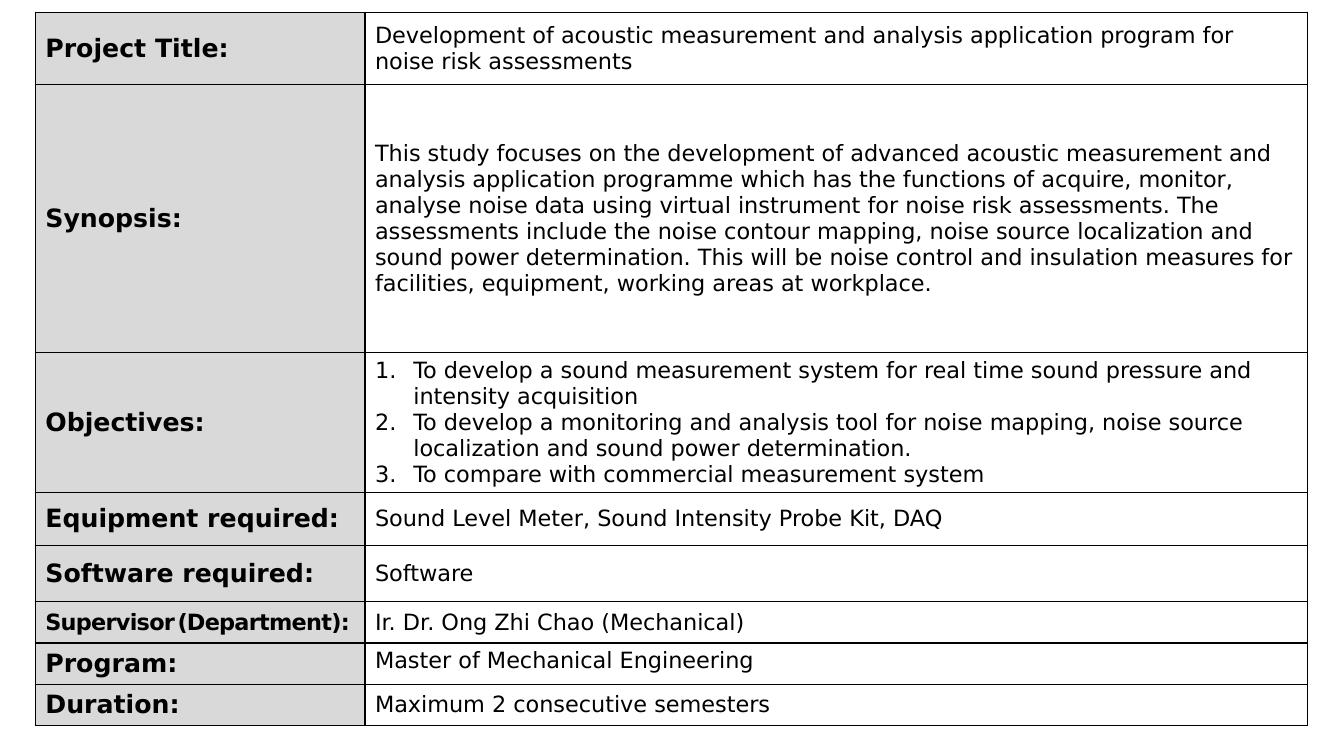
from dataclasses import dataclass

from lxml import etree
from pptx import Presentation
from pptx.dml.color import RGBColor
from pptx.enum.text import MSO_ANCHOR
from pptx.oxml.ns import qn
from pptx.util import Inches, Pt

MIDDLE, TOP = MSO_ANCHOR.MIDDLE, MSO_ANCHOR.TOP
BLANK_LAYOUT = 6


@dataclass(frozen=True)
class Theme:
    font: str = "DejaVu Sans"
    ink: str = "000000"
    label_fill: str = "D9D9D9"
    value_fill: str = "FFFFFF"
    label_size: float = 18
    value_size: float = 16
    gap_size: float = 5
    border: float = 1


THEME = Theme()
COLUMN_WIDTHS = (3.27, 9.35)

# Row height, label, paragraphs of the value
ROWS = [
    (0.72, "Project Title:", [
        "Development of acoustic measurement and analysis application program "
        "for noise risk assessments"]),
    (2.66, "Synopsis:", [
        "This study focuses on the development of advanced acoustic measurement "
        "and analysis application programme which has the functions of acquire, "
        "monitor, analyse noise data using virtual instrument for noise risk "
        "assessments. The assessments include the noise contour mapping, noise "
        "source localization and sound power determination. This will be noise "
        "control and insulation measures for facilities, equipment, working "
        "areas at workplace."]),
    (1.39, "Objectives:", [
        "To develop a sound measurement system for real time sound pressure and "
        "intensity acquisition",
        "To develop a monitoring and analysis tool for noise mapping, noise "
        "source localization and sound power determination.",
        "To compare with commercial measurement system"]),
    (0.52, "Equipment required:", ["Sound Level Meter, Sound Intensity Probe Kit, DAQ"]),
    (0.56, "Software required:", ["Software"]),
    (0.41, "Supervisor (Department):", ["Ir. Dr. Ong Zhi Chao (Mechanical)"]),
    (0.41, "Program:", ["Master of Mechanical Engineering"]),
    (0.41, "Duration:", ["Maximum 2 consecutive semesters"]),
]


def add_text(p, text, size=THEME.value_size, bold=False, spacing=None):
    """Add one formatted run; spacing is in points."""
    r = p.add_run()
    r.text = text
    r.font.name = THEME.font
    r.font.size = Pt(size)
    r.font.bold = bold
    r.font.color.rgb = RGBColor.from_string(THEME.ink)
    if spacing is not None:
        r.font._element.set("spc", str(round(spacing * 100)))


def number_paragraph(p, indent=0.38):
    pPr = p._p.get_or_add_pPr()
    pPr.set("marL", str(Inches(indent)))
    pPr.set("indent", str(-Inches(indent)))
    etree.SubElement(pPr, qn("a:buFont"), typeface="+mj-lt")
    etree.SubElement(pPr, qn("a:buAutoNum"), type="arabicPeriod")


def style_cell(cell, fill):
    # Borders come before the fill in the cell properties
    tcPr = cell._tc.get_or_add_tcPr()
    for side in ("a:lnL", "a:lnR", "a:lnT", "a:lnB"):
        ln = etree.SubElement(tcPr, qn(side), w=str(Pt(THEME.border)))
        solid = etree.SubElement(ln, qn("a:solidFill"))
        etree.SubElement(solid, qn("a:srgbClr"), val=THEME.ink)
    cell.fill.solid()
    cell.fill.fore_color.rgb = RGBColor.from_string(fill)
    cell.vertical_anchor = MIDDLE


def fill_label(cell, label):
    style_cell(cell, THEME.label_fill)
    p = cell.text_frame.paragraphs[0]
    if label.startswith("Supervisor"):
        # Long label: tighter letters and a narrow gap keep it on one line
        cell.margin_right = 0
        name, department = label.split(" ")
        for text, size in ((name, THEME.value_size), (" ", THEME.gap_size),
                           (department, THEME.value_size)):
            add_text(p, text, size=size, bold=True, spacing=-0.5)
    else:
        add_text(p, label, size=THEME.label_size, bold=True)


def fill_value(cell, paragraphs):
    style_cell(cell, THEME.value_fill)
    tf = cell.text_frame
    for i, text in enumerate(paragraphs):
        p = tf.add_paragraph() if i else tf.paragraphs[0]
        if len(paragraphs) > 1:
            number_paragraph(p)
        add_text(p, text)


def add_project_table(s):
    heights = [height for height, _, _ in ROWS]
    frame = s.shapes.add_table(
        len(ROWS), len(COLUMN_WIDTHS), Inches(0.35), Inches(0.12),
        Inches(sum(COLUMN_WIDTHS)), Inches(sum(heights)))
    table = frame.table
    table.first_row = table.horz_banding = False
    for column, width in zip(table.columns, COLUMN_WIDTHS):
        column.width = Inches(width)
    for i, (height, label, paragraphs) in enumerate(ROWS):
        table.rows[i].height = Inches(height)
        fill_label(table.cell(i, 0), label)
        fill_value(table.cell(i, 1), paragraphs)
        if label == "Program:":
            table.cell(i, 1).vertical_anchor = TOP


def main():
    prs = Presentation()
    prs.slide_width, prs.slide_height = Inches(13.33), Inches(7.5)
    s = prs.slides.add_slide(prs.slide_layouts[BLANK_LAYOUT])
    add_project_table(s)
    prs.save("out.pptx")


if __name__ == "__main__":
    main()
